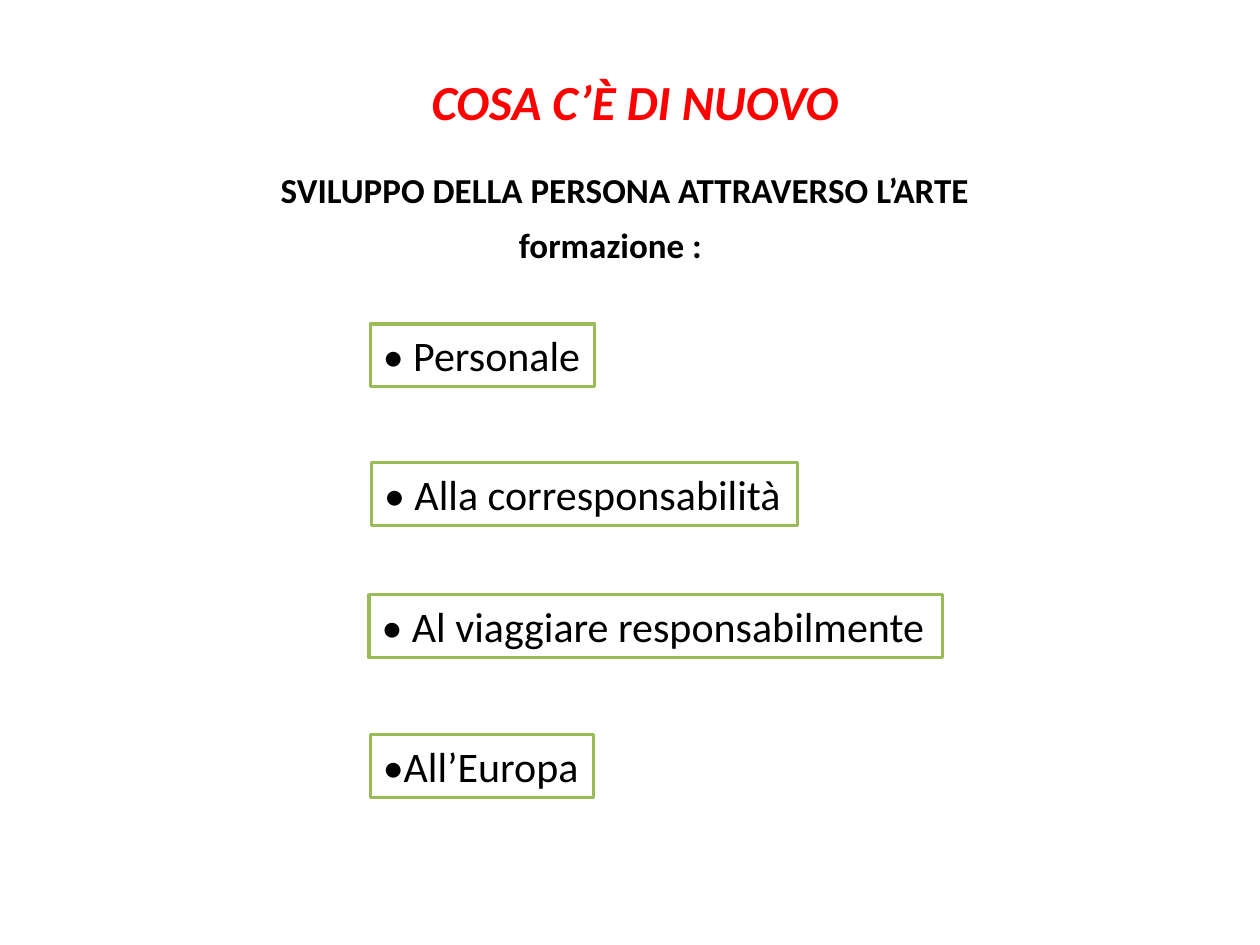
from pptx import Presentation
from pptx.dml.color import RGBColor
from pptx.enum import shapes, text
from pptx.util import Inches, Pt

BLACK = RGBColor(0x00, 0x00, 0x00)
WHITE = RGBColor(0xFF, 0xFF, 0xFF)
RED = RGBColor(0xFF, 0x00, 0x00)
GREEN = RGBColor(0x9B, 0xBB, 0x59)


def add_run(p, words, size, color, bold=False, italic=False):
    r = p.add_run()
    r.text = words
    r.font.name = "Calibri"
    r.font.size = Pt(size)
    r.font.color.rgb = color
    r.font.bold = bold
    r.font.italic = italic


prs = Presentation()
prs.slide_width = Inches(10)
prs.slide_height = Inches(7.5)
s = prs.slides.add_slide(prs.slide_layouts[6])

headings = [
    ("COSA C’È DI NUOVO", 1.77, 0.52, 6.54, 0.57, 28, RED, True),
    ("SVILUPPO DELLA PERSONA ATTRAVERSO L’ARTE", 0.67, 1.24, 8.58, 0.52, 20, BLACK, False),
    ("formazione :", 1.54, 1.72, 6.61, 0.44, 20, BLACK, False),
]
for words, x, y, w, h, size, color, italic in headings:
    sp = s.shapes.add_textbox(Inches(x), Inches(y), Inches(w), Inches(h))
    tf = sp.text_frame
    tf.word_wrap = True
    tf.vertical_anchor = text.MSO_ANCHOR.MIDDLE
    p = tf.paragraphs[0]
    p.alignment = text.PP_ALIGN.CENTER
    add_run(p, words, size, color, True, italic)

goals = [
    ("• Personale", 2.94, 2.57, 1.78),
    ("• Alla corresponsabilità", 2.95, 3.67, 3.38),
    ("• Al viaggiare responsabilmente", 2.93, 4.72, 4.55),
    ("•All’Europa", 2.94, 5.83, 1.77),
]
for words, x, y, w in goals:
    sp = s.shapes.add_shape(shapes.MSO_SHAPE.RECTANGLE, Inches(x), Inches(y), Inches(w), Inches(0.5))
    sp.shadow.inherit = False
    sp.fill.solid()
    sp.fill.fore_color.rgb = WHITE
    sp.line.color.rgb = GREEN
    sp.line.width = Pt(2)
    tf = sp.text_frame
    tf.word_wrap = False
    tf.vertical_anchor = text.MSO_ANCHOR.TOP
    p = tf.paragraphs[0]
    p.alignment = text.PP_ALIGN.LEFT
    add_run(p, words, 24, BLACK)

prs.save("out.pptx")
